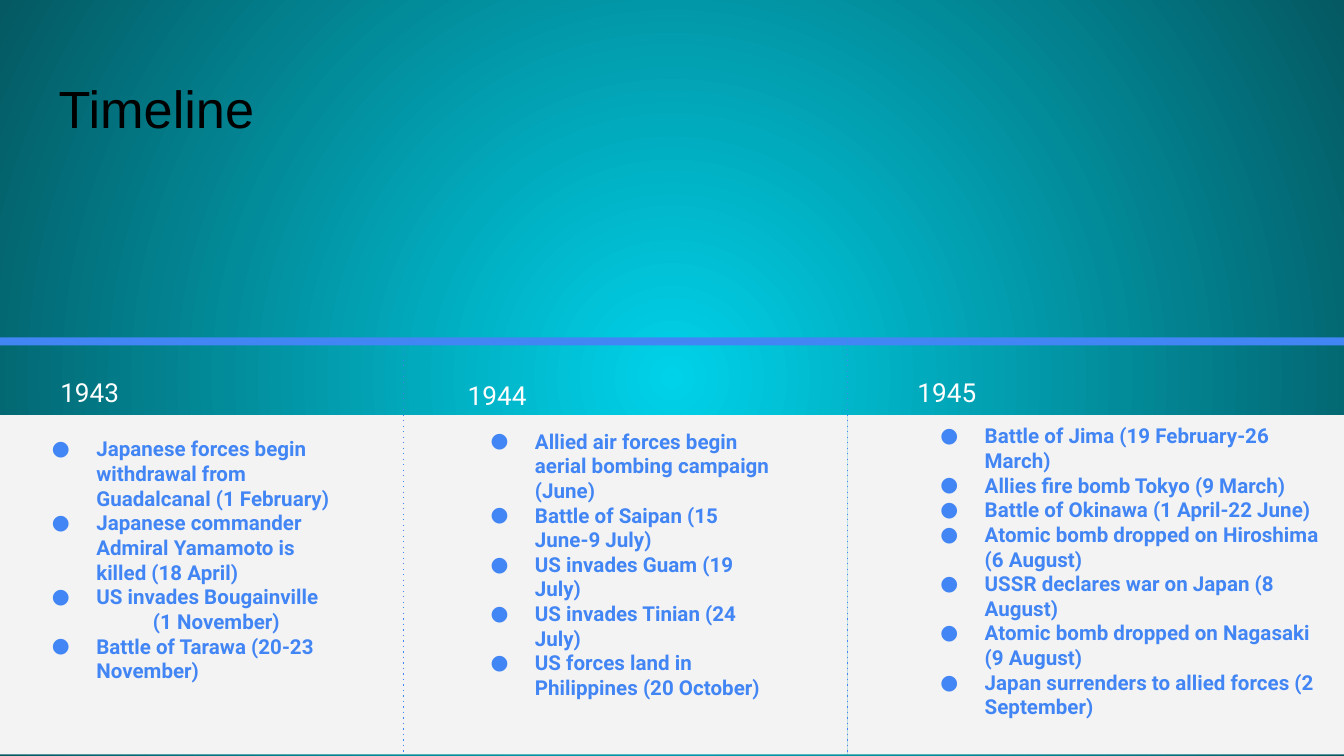
from lxml.etree import SubElement
from pptx import Presentation
from pptx.dml.color import RGBColor
from pptx.enum.shapes import MSO_CONNECTOR, MSO_SHAPE
from pptx.enum.text import MSO_ANCHOR, MSO_AUTO_SIZE, PP_ALIGN
from pptx.oxml.ns import qn
from pptx.util import Cm, Pt

BLUE = RGBColor(0x42, 0x85, 0xF4)
PANEL_GREY = RGBColor(0xF3, 0xF3, 0xF3)
CYAN = RGBColor(0x00, 0xD2, 0xE9)
DEEP_TEAL = RGBColor(0x04, 0x59, 0x62)
WHITE = RGBColor(0xFF, 0xFF, 0xFF)
BLACK = RGBColor(0x00, 0x00, 0x00)

BAR_TOP, BAR_HEIGHT = 6.38, 0.15
PANEL_TOP, BOTTOM = 7.85, 14.26
BULLET_INDENT, BULLET_HANG, DATE_INDENT = 1.27, 0.84, 2.34

YEARS = [
    ("1943", 0, 7.62, (0.89, 6.78, 4.34), (0.3, 8, 6.43, 5.84), [
        "Japanese forces begin withdrawal from Guadalcanal (1 February)",
        "Japanese commander Admiral Yamamoto is killed (18 April)",
        "US invades Bougainville",
        "(1 November)",
        "Battle of Tarawa (20-23 November)",
    ]),
    ("1944", 7.62, 16.02, (8.59, 6.83, 4.8), (8.59, 7.85, 6.48, 6.17), [
        "Allied air forces begin aerial bombing campaign (June)",
        "Battle of Saipan (15 June-9 July)",
        "US invades Guam (19 July)",
        "US invades Tinian (24 July)",
        "US forces land in Philippines (20 October)",
    ]),
    ("1945", 16.02, 25.4, (17.09, 6.78, 5.38), (17.09, 7.75, 8.31, 6.43), [
        "Battle of Jima (19 February-26 March)",
        "Allies fire bomb Tokyo (9 March)",
        "Battle of Okinawa (1 April-22 June)",
        "Atomic bomb dropped on Hiroshima (6 August)",
        "USSR declares war on Japan (8 August)",
        "Atomic bomb dropped on Nagasaki (9 August)",
        "Japan surrenders to allied forces (2 September)",
    ]),
]


def prepare_frame(frame, anchor):
    frame.word_wrap = True
    frame.auto_size = MSO_AUTO_SIZE.NONE
    frame.vertical_anchor = anchor
    frame.margin_left = frame.margin_right = Cm(0.25)
    frame.margin_top = frame.margin_bottom = Cm(0.25)


def format_paragraph(paragraph, font_name, size, color, bold=False):
    paragraph.alignment = PP_ALIGN.LEFT
    paragraph.space_before = Pt(0)
    for run in paragraph.runs:
        run.font.name = font_name
        run.font.size = Pt(size)
        run.font.bold = bold
        run.font.color.rgb = color


prs = Presentation()
prs.slide_width, prs.slide_height = Cm(25.4), Cm(14.29)
slide = prs.slides.add_slide(prs.slide_layouts[4])
shapes = slide.shapes

backdrop = slide.background.fill
backdrop.gradient()
for stop, color in zip(backdrop.gradient_stops, (CYAN, DEEP_TEAL)):
    stop.color.rgb = color
gradient = slide._element.find(".//" + qn("a:gradFill"))
gradient.remove(gradient.find(qn("a:lin")))
circle = SubElement(gradient, qn("a:path"), {"path": "circle"})
SubElement(circle, qn("a:fillToRect"), dict.fromkeys("ltrb", "50000"))

heading = shapes.title
heading.left, heading.top, heading.width, heading.height = (
    Cm(0.86), Cm(1.24), Cm(23.67), Cm(1.6))
heading.text_frame.text = "Timeline"
prepare_frame(heading.text_frame, MSO_ANCHOR.MIDDLE)
format_paragraph(heading.text_frame.paragraphs[0], "Arial", 28, BLACK)

event_lists = [holder for holder in slide.placeholders
               if holder.placeholder_format.idx in (1, 2, 3)]
spare = slide.placeholders[4]._element
spare.getparent().remove(spare)

for (year, left, right, year_place, list_place, events), event_list in zip(
        YEARS, event_lists):
    for top, height, color in ((PANEL_TOP, BOTTOM - PANEL_TOP, PANEL_GREY),
                               (BAR_TOP, BAR_HEIGHT, BLUE)):
        band = shapes.add_shape(MSO_SHAPE.RECTANGLE, Cm(left), Cm(top),
                                Cm(right - left), Cm(height))
        band.shadow.inherit = False
        band.fill.solid()
        band.fill.fore_color.rgb = color
        band.line.fill.background()

    event_list.left, event_list.top, event_list.width, event_list.height = map(
        Cm, list_place)
    shapes._spTree.append(event_list._element)
    event_list.text_frame.text = "\n".join(events)
    prepare_frame(event_list.text_frame, MSO_ANCHOR.TOP)
    for event in event_list.text_frame.paragraphs:
        format_paragraph(event, "Roboto", 11, BLUE, bold=True)
        props = event._p.get_or_add_pPr()
        if event.text.startswith("("):
            props.set("marL", str(Cm(DATE_INDENT)))
            props.set("indent", "0")
            SubElement(props, qn("a:buNone"))
        else:
            props.set("marL", str(Cm(BULLET_INDENT)))
            props.set("indent", str(-Cm(BULLET_HANG)))
            bullet_color = SubElement(props, qn("a:buClr"))
            SubElement(bullet_color, qn("a:srgbClr"), val=str(BLUE))
            SubElement(props, qn("a:buFont"), typeface="Roboto")
            SubElement(props, qn("a:buChar"), char="●")

    year_left, year_top, year_width = year_place
    year_label = shapes.add_textbox(Cm(year_left), Cm(year_top),
                                    Cm(year_width), Cm(0.71))
    year_label.text_frame.text = year
    prepare_frame(year_label.text_frame, MSO_ANCHOR.TOP)
    year_line = year_label.text_frame.paragraphs[0]
    format_paragraph(year_line, "Roboto", 14, WHITE)
    year_line.line_spacing = 1.15
    year_line.space_after = Pt(16)

for _, _, right, *_ in YEARS[:-1]:
    divider = shapes.add_connector(MSO_CONNECTOR.STRAIGHT, Cm(right),
                                   Cm(BAR_TOP), Cm(right), Cm(BOTTOM))
    divider.line.color.rgb = BLUE
    divider.line.width = Pt(0.75)
    SubElement(divider.line._get_or_add_ln(), qn("a:prstDash"), val="dot")
    SubElement(divider._element.spPr, qn("a:effectLst"))

prs.save("out.pptx")
